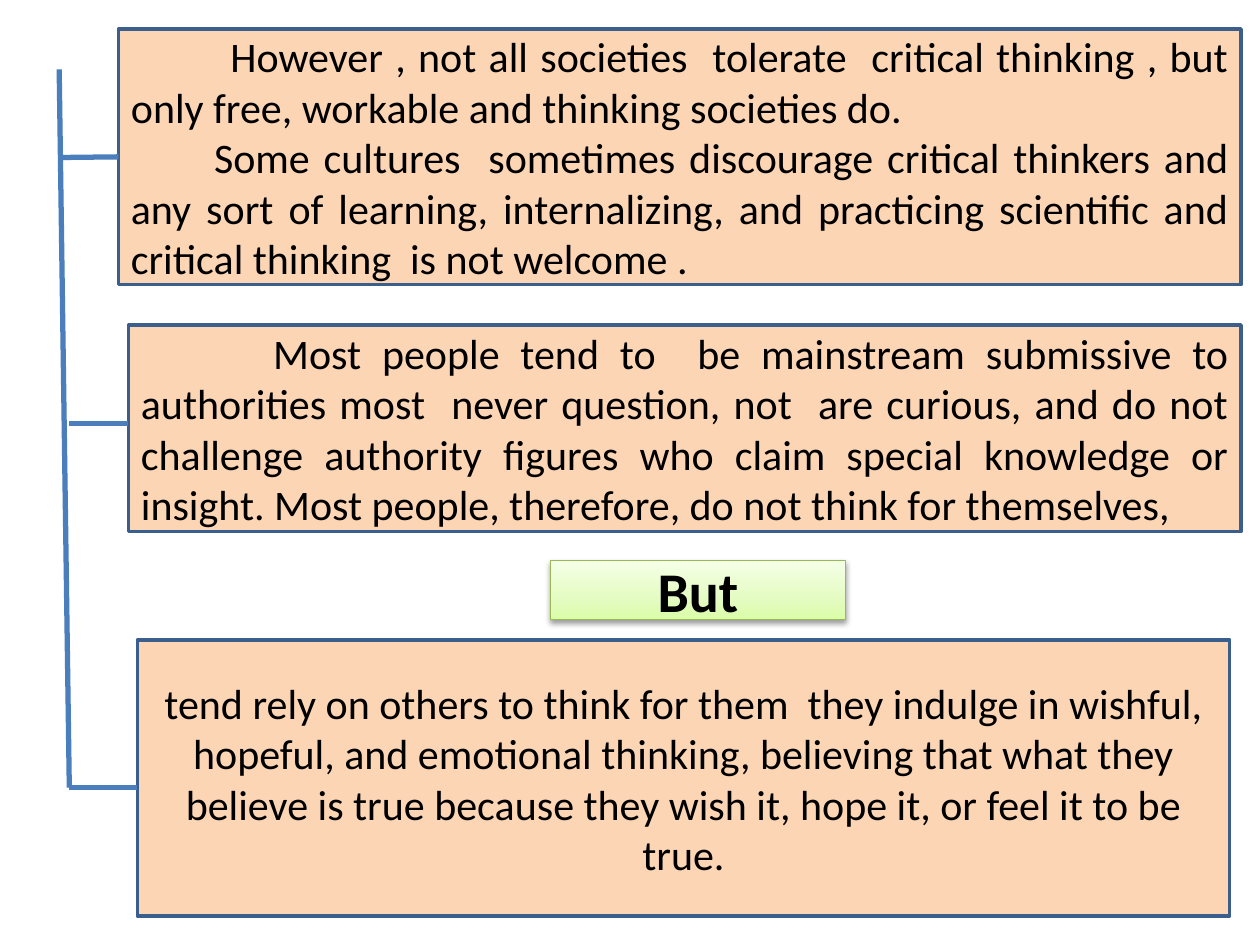
from lxml import etree
from pptx import Presentation
from pptx.dml.color import RGBColor
from pptx.enum import shapes, text
from pptx.oxml import parse_xml
from pptx.oxml.ns import nsdecls, qn
from pptx.util import Inches, Pt

COLORS = {
    "peach": "FCD5B5",
    "box edge": "3A5F8C",
    "branch": "4B7EBC",
    "green edge": "98B955",
    "green dark": "DAFDA7",
    "green mid": "E4FCC2",
    "green light": "F5FFE7",
    "black": "000000",
}


def rgb(name):
    return RGBColor.from_string(COLORS[name])


def add_box(place, paragraphs, size=24, bold=False, align=text.PP_ALIGN.CENTER,
            edge="box edge", edge_width=2):
    """Add a filled rectangle; paragraphs are (first-line indent in inches, words)."""
    box = slide.shapes.add_shape(shapes.MSO_SHAPE.RECTANGLE, *map(Inches, place))
    box.shadow.inherit = False
    box.fill.solid()
    box.fill.fore_color.rgb = rgb("peach")
    box.line.color.rgb = rgb(edge)
    box.line.width = Pt(edge_width)
    frame = box.text_frame
    frame.word_wrap = True
    frame.vertical_anchor = text.MSO_ANCHOR.MIDDLE
    for number, (indent, words) in enumerate(paragraphs):
        paragraph = frame.add_paragraph() if number else frame.paragraphs[0]
        paragraph.alignment = align
        if indent:
            paragraph._p.get_or_add_pPr().set("indent", str(Inches(indent)))
        run = paragraph.add_run()
        run.text = words
        run.font.name = "Calibri"
        run.font.size = Pt(size)
        run.font.bold = bold
        run.font.color.rgb = rgb("black")
    return box


prs = Presentation()
prs.slide_width, prs.slide_height = Inches(10), Inches(7.5)
slide = prs.slides.add_slide(prs.slide_layouts[6])

# Statements
societies = add_box((0.94, 0.23, 8.91, 2.03), [
    (0.79, "However , not all societies  tolerate  critical thinking , but only free, "
           "workable and thinking societies do."),
    (0.66, "Some cultures  sometimes discourage critical thinkers and any sort of "
           "learning, internalizing, and practicing scientific and critical thinking  "
           "is not welcome ."),
], align=text.PP_ALIGN.JUSTIFY)
add_box((1.02, 2.58, 8.83, 1.64), [
    (1.05, "Most people tend to  be mainstream submissive to authorities most  never "
           "question, not  are curious, and do not challenge authority figures who claim "
           "special knowledge or insight. Most people, therefore, do not think for "
           "themselves,"),
], align=text.PP_ALIGN.JUSTIFY)
add_box((1.09, 5.08, 8.67, 2.19), [
    (0, "tend rely on others to think for them  they indulge in wishful, hopeful, and "
        "emotional thinking, believing that what they believe is true because they wish "
        "it, hope it, or feel it to be true."),
])

# Contrast label with a green gradient and a soft shadow
but = add_box((4.37, 4.45, 2.34, 0.47), [(0, "But")], size=32, bold=True,
              edge="green edge", edge_width=0.75)
but.fill.gradient()
but.fill.gradient_angle = 90
stops = but._element.spPr.find(".//" + qn("a:gsLst"))
for stop in list(stops):
    stops.remove(stop)
for percent, name in ((0, "green dark"), (35, "green mid"), (100, "green light")):
    stop = etree.SubElement(stops, qn("a:gs"), pos=str(percent * 1000))
    etree.SubElement(stop, qn("a:srgbClr"), val=COLORS[name])
but._element.spPr.find(qn("a:effectLst")).append(parse_xml(
    f'<a:outerShdw {nsdecls("a")} blurRad="{Pt(3.1)}" dist="{Pt(1.6)}" dir="5400000" '
    f'rotWithShape="0"><a:srgbClr val="{COLORS["black"]}"><a:alpha val="38000"/>'
    '</a:srgbClr></a:outerShdw>'))

# Trunk and its three branches
branches = [
    ((0.47, 0.55, 0.55, 6.25), None),
    ((0.47, 1.25, 0.94, 1.25), societies),
    ((0.55, 3.36, 1.02, 3.36), None),
    ((0.55, 6.25, 1.09, 6.25), None),
]
for ends, target in branches:
    branch = slide.shapes.add_connector(shapes.MSO_CONNECTOR.STRAIGHT, *map(Inches, ends))
    branch.line.color.rgb = rgb("branch")
    branch.line.width = Pt(3)
    etree.SubElement(branch._element.spPr, qn("a:effectLst"))
    if target is not None:
        branch.end_connect(target, 1)

prs.save("out.pptx")
